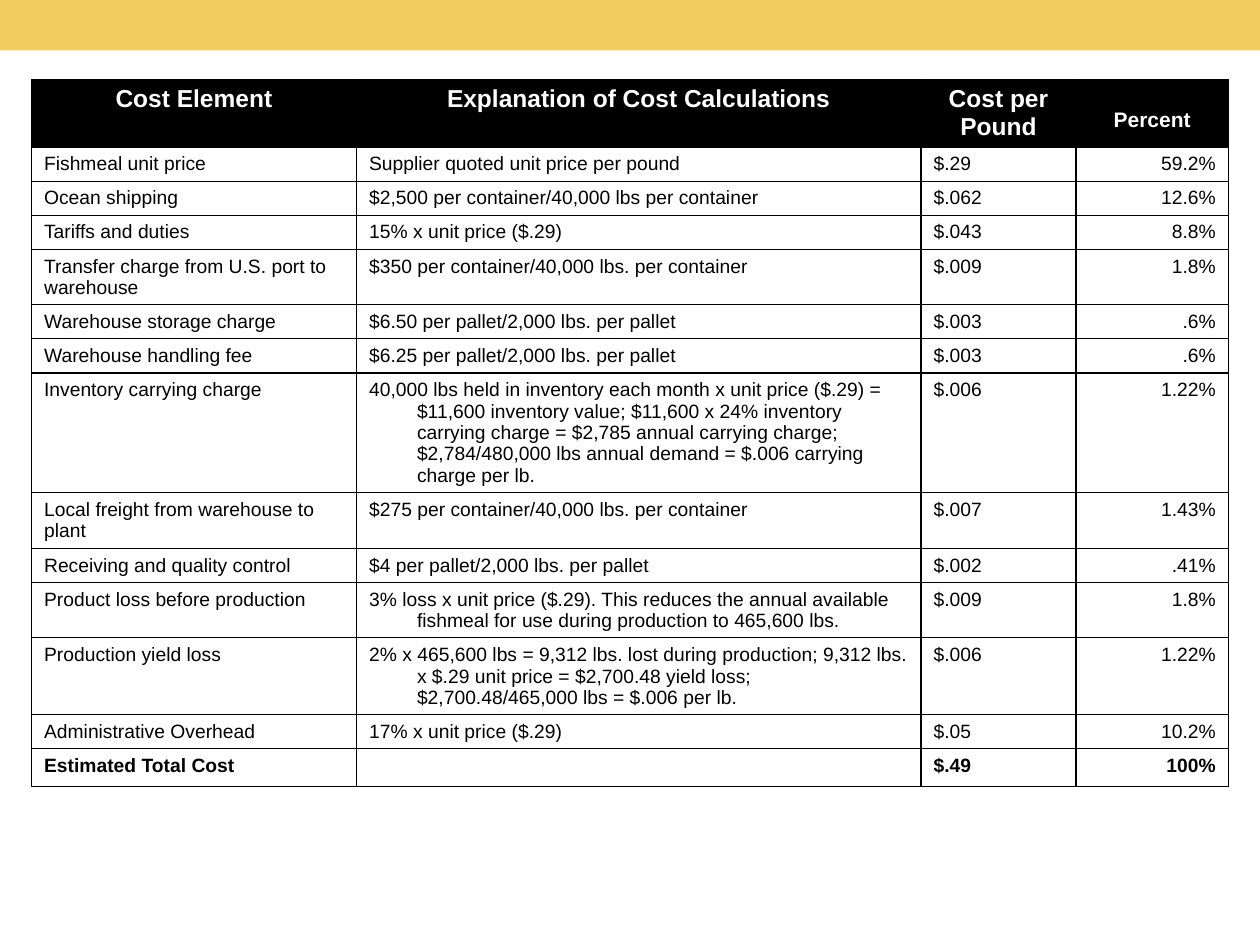
from lxml import etree
from pptx import Presentation
from pptx.dml.color import RGBColor
from pptx.enum import shapes, text
from pptx.oxml.ns import qn
from pptx.util import Inches, Pt

# Content
HEADERS = ["Cost Element", "Explanation of Cost Calculations", "Cost per Pound", "Percent"]
# Number of text lines, then the four cells
COSTS = [
    (1, "Fishmeal unit price", "Supplier quoted unit price per pound", "$.29", "59.2%"),
    (1, "Ocean shipping", "$2,500 per container/40,000 lbs per container", "$.062", "12.6%"),
    (1, "Tariffs and duties", "15% x unit price ($.29)", "$.043", "8.8%"),
    (2, "Transfer charge from U.S. port to warehouse",
     "$350 per container/40,000 lbs. per container", "$.009", "1.8%"),
    (1, "Warehouse storage charge", "$6.50 per pallet/2,000 lbs. per pallet", "$.003", ".6%"),
    (1, "Warehouse handling fee", "$6.25 per pallet/2,000 lbs. per pallet", "$.003", ".6%"),
    (5, "Inventory carrying charge",
     "40,000 lbs held in inventory each month x unit price ($.29) = $11,600 inventory value; "
     "$11,600 x 24% inventory carrying charge = $2,785 annual carrying charge; "
     "$2,784/480,000 lbs annual demand = $.006 carrying charge per lb.", "$.006", "1.22%"),
    (2, "Local freight from warehouse to plant",
     "$275 per container/40,000 lbs. per container", "$.007", "1.43%"),
    (1, "Receiving and quality control", "$4 per pallet/2,000 lbs. per pallet", "$.002", ".41%"),
    (2, "Product loss before production",
     "3% loss x unit price ($.29). This reduces the annual available fishmeal for use "
     "during production to 465,600 lbs.", "$.009", "1.8%"),
    (3, "Production yield loss",
     "2% x 465,600 lbs = 9,312 lbs. lost during production; 9,312 lbs. x $.29 unit price = "
     "$2,700.48 yield loss; $2,700.48/465,000 lbs = $.006 per lb.", "$.006", "1.22%"),
    (1, "Administrative Overhead", "17% x unit price ($.29)", "$.05", "10.2%"),
]
TOTAL = ["Estimated Total Cost", "", "$.49", "100%"]

COL_WIDTHS = [2.58, 4.48, 1.23, 1.21]
HEADER_H, TOTAL_H = 0.53, 0.3
CELL_PAD, LINE_H = 0.1, 0.17
HANG = 0.38
LEFT, CENTER, RIGHT = text.PP_ALIGN.LEFT, text.PP_ALIGN.CENTER, text.PP_ALIGN.RIGHT
# Cells whose text wraps flush instead of hanging
FLUSH = {"Cost per Pound", "Transfer charge from U.S. port to warehouse",
         "Local freight from warehouse to plant"}


def rgb(value):
    return RGBColor.from_string(value)


def add_borders(cell, color="000000", width=0.75):
    tcPr = cell._tc.get_or_add_tcPr()
    for i, side in enumerate(("a:lnL", "a:lnR", "a:lnT", "a:lnB")):
        ln = etree.Element(qn(side), w=str(Pt(width)))
        fill = etree.SubElement(ln, qn("a:solidFill"))
        etree.SubElement(fill, qn("a:srgbClr"), val=color)
        tcPr.insert(i, ln)


def fill_cell(cell, words, align, size, color="000000", bold=False, fill="FFFFFF"):
    cell.fill.solid()
    cell.fill.fore_color.rgb = rgb(fill)
    add_borders(cell)
    p = cell.text_frame.paragraphs[0]
    if not words:
        etree.SubElement(p._p, qn("a:endParaRPr"), sz=str(size * 100))
        return
    p.alignment = align
    if words not in FLUSH:
        pPr = p._p.get_or_add_pPr()
        pPr.set("marL", str(Inches(HANG)))
        pPr.set("indent", str(-Inches(HANG)))
    r = p.add_run()
    r.text = words
    r.font.name, r.font.size, r.font.bold = "Arial", Pt(size), bold
    r.font.color.rgb = rgb(color)


prs = Presentation()
prs.slide_width, prs.slide_height = Inches(10), Inches(7.5)
s = prs.slides.add_slide(prs.slide_layouts[6])

# Top band
band = s.shapes.add_shape(shapes.MSO_SHAPE.RECTANGLE, 0, 0, prs.slide_width, Inches(0.4))
band.shadow.inherit = False
band.fill.solid()
band.fill.fore_color.rgb = rgb("F3CC5F")
band.line.fill.background()

# Cost table
heights = [HEADER_H] + [CELL_PAD + LINE_H * row[0] for row in COSTS] + [TOTAL_H]
frame = s.shapes.add_table(len(heights), len(COL_WIDTHS), Inches(0.25), Inches(0.63),
                           Inches(sum(COL_WIDTHS)), Inches(sum(heights)))
table = frame.table
table.horz_banding = False
for column, width in zip(table.columns, COL_WIDTHS):
    column.width = Inches(width)
for row, height in zip(table.rows, heights):
    row.height = Inches(height)

# Header row, with the smaller last heading set lower
for c, heading in enumerate(HEADERS):
    fill_cell(table.cell(0, c), heading, CENTER, 12 if heading == "Percent" else 14,
              color="FFFFFF", bold=True, fill="000000")
table.cell(0, 3).margin_top = Inches(0.23)

# Cost rows and total
body = [row[1:] for row in COSTS] + [TOTAL]
for r_index, row in enumerate(body, start=1):
    for c, words in enumerate(row):
        fill_cell(table.cell(r_index, c), words, RIGHT if c == 3 else LEFT, 11,
                  bold=row is TOTAL)

prs.save("out.pptx")
